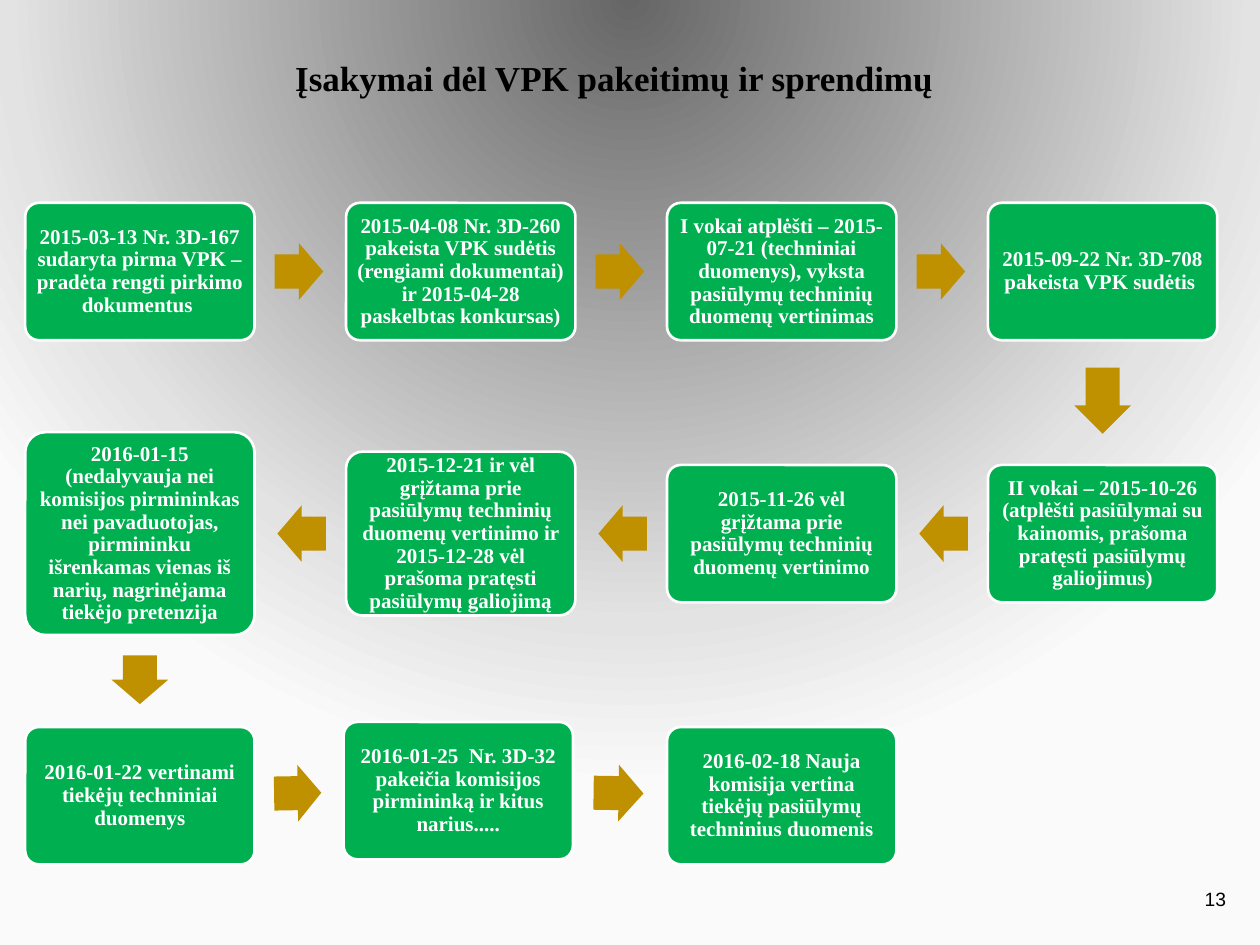
from dataclasses import dataclass
from itertools import pairwise
from math import atan2, cos, degrees, hypot, sin

from lxml.etree import SubElement
from pptx import Presentation
from pptx.dml.color import RGBColor
from pptx.enum.shapes import MSO_SHAPE
from pptx.enum.text import MSO_ANCHOR, PP_ALIGN
from pptx.oxml.ns import qn
from pptx.util import Inches, Pt


@dataclass(frozen=True)
class Theme:
    box: str = "00B050"
    edge: str = "FFFFFF"
    arrow: str = "BF9000"
    light: str = "FFFFFF"
    dark: str = "000000"
    back: tuple = ((0, "666666"), (79, "E3E3E3"), (100, "FAFAFA"))
    serif: str = "Times New Roman"
    sans: str = "Arial"
    title: int = 20
    body: int = 12
    page: int = 11


@dataclass(frozen=True)
class Grid:
    """Centre of the first cell, pitch between cells, and box size, in inches."""
    left: float = 1.11
    top: float = 2.155
    col: float = 2.547
    row: float = 2.08
    wide: float = 1.82
    high: float = 1.09


THEME = Theme()
GRID = Grid()


@dataclass(frozen=True)
class Step:
    col: int
    row: int
    text: str
    high: float = GRID.high
    dx: float = 0
    dy: float = 0

    @property
    def x(self) -> float:
        return GRID.left + self.col * GRID.col + self.dx

    @property
    def y(self) -> float:
        return GRID.top + self.row * GRID.row + self.dy


# Steps in reading order: right, then left, then right again.
STEPS = (
    Step(0, 0, "2015-03-13 Nr. 3D-167 sudaryta pirma VPK – pradėta rengti pirkimo dokumentus "),
    Step(1, 0, "2015-04-08 Nr. 3D-260 pakeista VPK sudėtis (rengiami dokumentai) "
               "ir 2015-04-28 paskelbtas konkursas)"),
    Step(2, 0, "I vokai atplėšti – 2015-07-21 (techniniai duomenys), vyksta "
               "pasiūlymų techninių duomenų vertinimas"),
    Step(3, 0, "2015-09-22 Nr. 3D-708 pakeista VPK sudėtis "),
    Step(3, 1, "II vokai – 2015-10-26 (atplėšti pasiūlymai su kainomis, prašoma "
               "pratęsti pasiūlymų galiojimus)"),
    Step(2, 1, "2015-11-26 vėl grįžtama prie pasiūlymų techninių duomenų vertinimo"),
    Step(1, 1, "2015-12-21 ir vėl grįžtama prie pasiūlymų techninių duomenų vertinimo "
               "ir 2015-12-28 vėl prašoma pratęsti pasiūlymų galiojimą", high=1.3),
    Step(0, 1, "2016-01-15 (nedalyvauja nei komisijos pirmininkas nei pavaduotojas, "
               "pirmininku išrenkamas vienas iš narių, nagrinėjama tiekėjo pretenzija", high=1.61),
    Step(0, 2, "2016-01-22 vertinami tiekėjų techniniai duomenys"),
    Step(1, 2, "2016-01-25  Nr. 3D-32 pakeičia komisijos pirmininką ir kitus narius.....",
         dx=-0.02, dy=-0.04),
    Step(2, 2, "2016-02-18 Nauja komisija vertina tiekėjų pasiūlymų techninius duomenis"),
)


def write(shape, text: str, *, size: int, color: str, font: str = THEME.serif,
          bold: bool = True, align=PP_ALIGN.CENTER, anchor=MSO_ANCHOR.MIDDLE,
          space: float = 0.9, inset: float | None = None) -> None:
    frame = shape.text_frame
    frame.word_wrap = True
    frame.vertical_anchor = anchor
    if inset is not None:
        frame.margin_left = frame.margin_right = Inches(inset)
        frame.margin_top = frame.margin_bottom = Inches(inset)
    para = frame.paragraphs[0]
    para.alignment = align
    para.line_spacing = space
    run = para.add_run()
    run.text = text
    run.font.name, run.font.size, run.font.bold = font, Pt(size), bold
    run.font.color.rgb = RGBColor.from_string(color)


def add_form(slide, kind, x: float, y: float, wide: float, high: float, fill: str):
    """Add a flat shape centred on x, y."""
    form = slide.shapes.add_shape(kind, Inches(x - wide / 2), Inches(y - high / 2),
                                  Inches(wide), Inches(high))
    form.shadow.inherit = False
    form.fill.solid()
    form.fill.fore_color.rgb = RGBColor.from_string(fill)
    form.line.fill.background()
    return form


def add_box(slide, step: Step) -> None:
    box = add_form(slide, MSO_SHAPE.ROUNDED_RECTANGLE, step.x, step.y,
                   GRID.wide, step.high, THEME.box)
    box.adjustments[0] = 0.1
    box.line.color.rgb = RGBColor.from_string(THEME.edge)
    box.line.width = Pt(1.5)
    write(box, step.text, size=THEME.body, color=THEME.light, inset=0.05)


def add_arrow(slide, start: Step, end: Step) -> None:
    """Put an arrow in the gap between two boxes, just short of its middle."""
    dx, dy = end.x - start.x, end.y - start.y
    angle = atan2(dy, dx)
    down = start.col == end.col
    near, far = (start.high / 2, end.high / 2) if down else (GRID.wide / 2,) * 2
    gap = hypot(dx, dy) - near - far
    reach = near + gap * 0.485
    arrow = add_form(slide, MSO_SHAPE.RIGHT_ARROW,
                     start.x + reach * cos(angle), start.y + reach * sin(angle),
                     gap * 0.53, 0.45, THEME.arrow)
    arrow.adjustments[0], arrow.adjustments[1] = 0.6, 0.5
    arrow.rotation = degrees(angle) % 360


def paint_back(slide) -> None:
    """Fill the background with a round gradient."""
    slide.background.fill.gradient()
    grad = slide.element.find(".//" + qn("a:gradFill"))
    for part in list(grad):
        grad.remove(part)
    stops = SubElement(grad, qn("a:gsLst"))
    for place, color in THEME.back:
        stop = SubElement(stops, qn("a:gs"), pos=str(place * 1000))
        SubElement(stop, qn("a:srgbClr"), val=color)
    ring = SubElement(grad, qn("a:path"), {"path": "circle"})
    SubElement(ring, qn("a:fillToRect"), l="50000", t="-80000", r="50000", b="180000")


def main() -> None:
    deck = Presentation()
    deck.slide_width, deck.slide_height = Inches(10), Inches(7.5)
    slide = deck.slides.add_slide(deck.slide_layouts[6])
    paint_back(slide)

    title = slide.shapes.add_textbox(Inches(0.44), Inches(0.44), Inches(8.87), Inches(0.74))
    write(title, "Įsakymai dėl VPK pakeitimų ir sprendimų", size=THEME.title,
          color=THEME.dark, anchor=MSO_ANCHOR.TOP)

    for step in STEPS:
        add_box(slide, step)
    for start, end in pairwise(STEPS):
        add_arrow(slide, start, end)

    page = slide.shapes.add_textbox(Inches(7.78), Inches(6.93), Inches(2.05), Inches(0.4))
    write(page, "13", size=THEME.page, color=THEME.dark, font=THEME.sans,
          bold=False, align=PP_ALIGN.RIGHT, space=1.0)
    deck.save("out.pptx")


if __name__ == "__main__":
    main()
